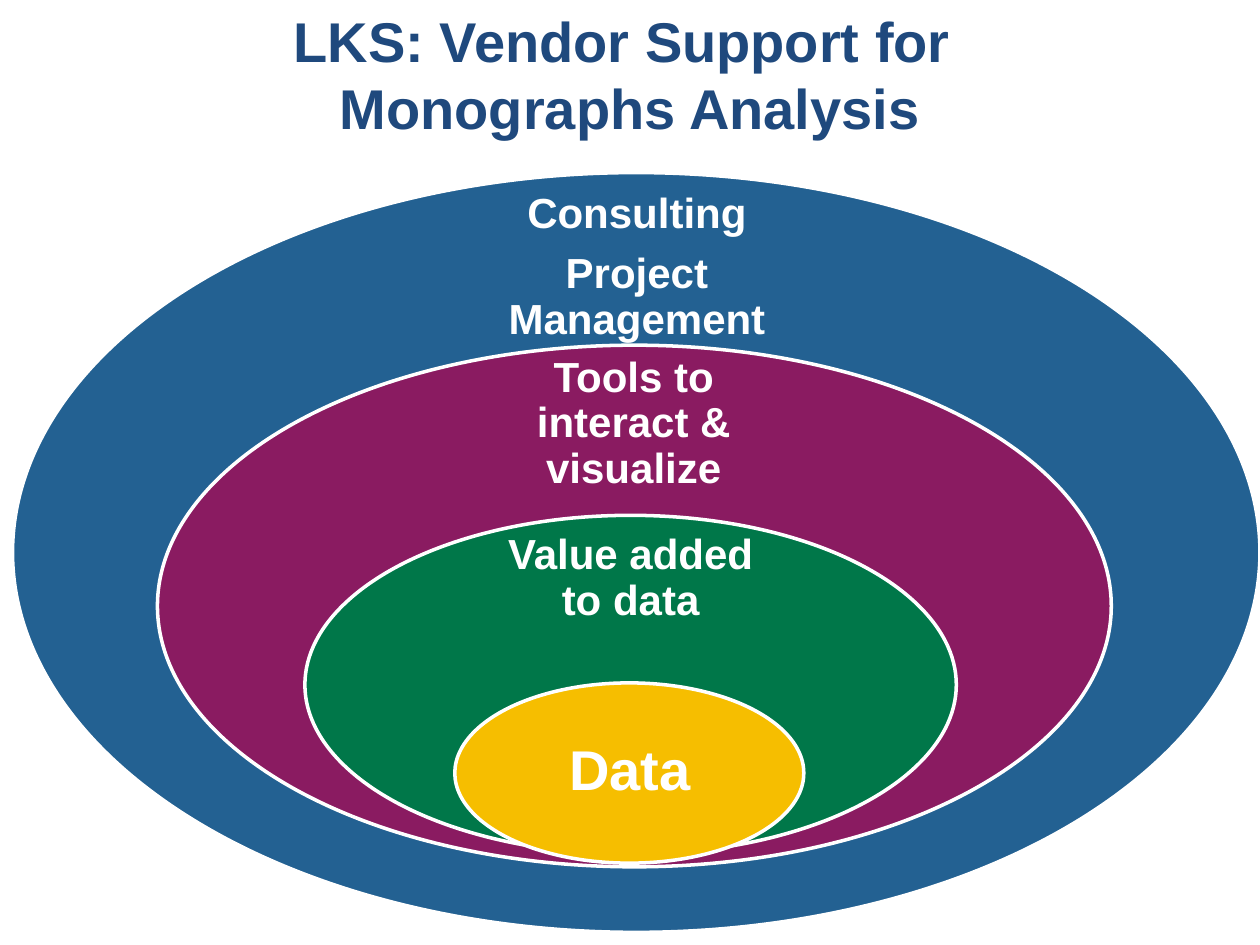
from dataclasses import dataclass
from pptx import Presentation
from pptx.dml.color import RGBColor
from pptx.enum.shapes import MSO_SHAPE
from pptx.enum.text import MSO_ANCHOR, PP_ALIGN
from pptx.util import Inches, Pt


@dataclass(frozen=True)
class Theme:
    font: str = "Arial"
    title: str = "1F497D"
    white: str = "FFFFFF"
    consulting: str = "236192"
    tools: str = "8A1B61"
    value: str = "007749"
    data: str = "F6BE00"
    large: int = 32
    body: int = 24
    outline: int = 2


THEME = Theme()
WIDTH, HEIGHT = Inches(10), Inches(7.5)
TITLE = "LKS: Vendor Support for \vMonographs Analysis"
TITLE_AREA = (0, 0, 100, 13.33)

LAYERS = [
    dict(lines=["Consulting", "Project Management"], fill=THEME.consulting, size=THEME.body,
         oval=(1, 18.27, 99, 80.4), label=(36.7, 22.27, 27.7, 12.13)),
    dict(lines=["Tools to interact & visualize"], fill=THEME.tools, size=THEME.body,
         oval=(12.5, 36.53, 75.7, 55.2), label=(37.1, 39.87, 26.4, 10)),
    dict(lines=["Value added to data"], fill=THEME.value, size=THEME.body,
         oval=(24.2, 54.53, 51.7, 35.87), label=(38, 57.2, 24.1, 8.13)),
    dict(lines=["Data"], fill=THEME.data, size=THEME.large,
         oval=(36.1, 72.27, 27.7, 19.07), label=(40.2, 76.93, 19.6, 9.6)),
]


def place(area):
    return [int(share * side / 100) for share, side in zip(area, (WIDTH, HEIGHT) * 2)]


def add_text(shapes, area, lines, *, size, color, anchor, inset, spacing, after=0):
    tf = shapes.add_textbox(*place(area)).text_frame
    tf.word_wrap = True
    tf.vertical_anchor = anchor
    tf.margin_left = tf.margin_right = tf.margin_top = tf.margin_bottom = Inches(inset)
    for i, line in enumerate(lines):
        p = tf.add_paragraph() if i else tf.paragraphs[0]
        p.text = line
        p.alignment = PP_ALIGN.CENTER
        p.line_spacing = spacing
        p.space_after = Pt(after)
        for r in p.runs:
            r.font.name = THEME.font
            r.font.size = Pt(size)
            r.font.bold = True
            r.font.color.rgb = RGBColor.from_string(color)


def add_oval(shapes, area, fill):
    sp = shapes.add_shape(MSO_SHAPE.OVAL, *place(area))
    sp.shadow.inherit = False
    sp.fill.solid()
    sp.fill.fore_color.rgb = RGBColor.from_string(fill)
    sp.line.color.rgb = RGBColor.from_string(THEME.white)
    sp.line.width = Pt(THEME.outline)


def main():
    prs = Presentation()
    prs.slide_width, prs.slide_height = WIDTH, HEIGHT
    s = prs.slides.add_slide(prs.slide_layouts[6])
    add_text(s.shapes, TITLE_AREA, [TITLE], size=THEME.large, color=THEME.title,
             anchor=MSO_ANCHOR.TOP, inset=0.05, spacing=1.0)
    group = s.shapes.add_group_shape()
    for layer in LAYERS:
        size = layer["size"]
        add_oval(group.shapes, layer["oval"], layer["fill"])
        add_text(group.shapes, layer["label"], layer["lines"], size=size, color=THEME.white,
                 anchor=MSO_ANCHOR.MIDDLE, inset=size / 128, spacing=0.9, after=0.35 * size)
    prs.save("out.pptx")


if __name__ == "__main__":
    main()
